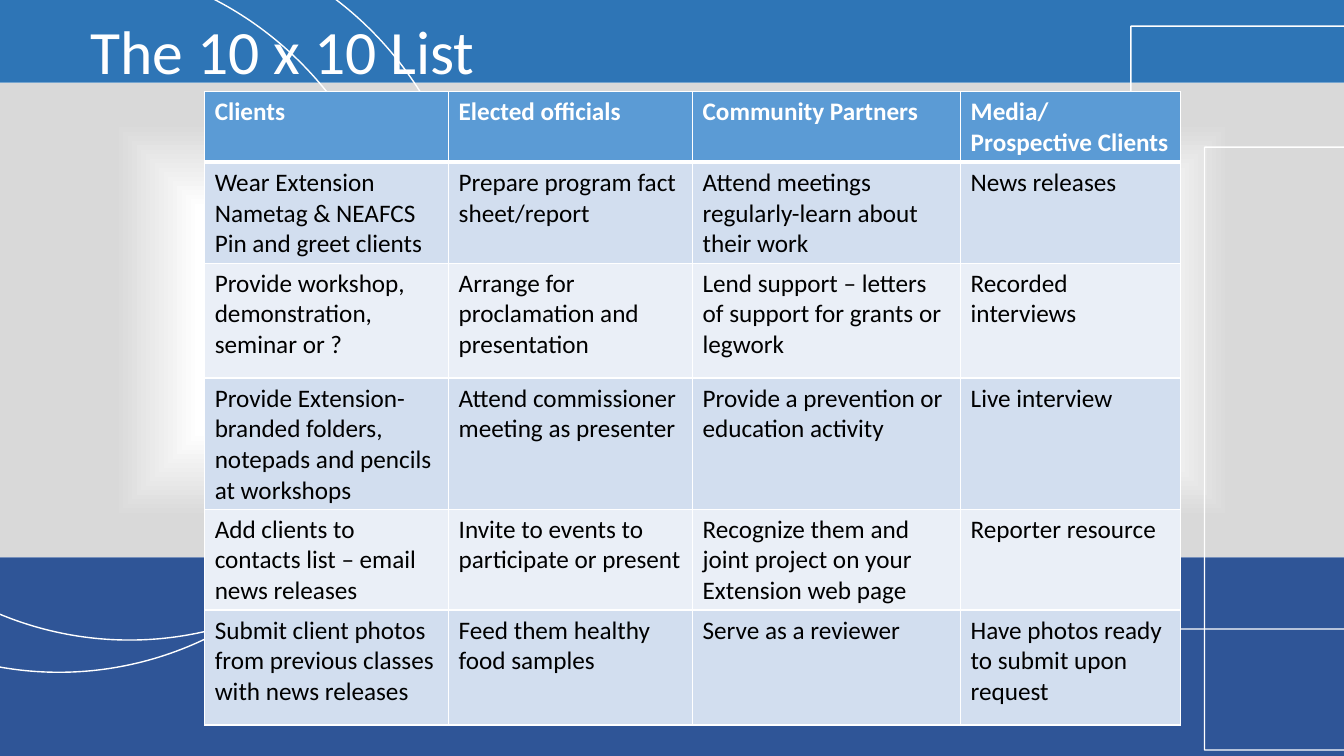
from pptx import Presentation
from pptx.dml.color import RGBColor
from pptx.enum.shapes import MSO_SHAPE as SHAPE
from pptx.enum.text import MSO_ANCHOR as ANCHOR
from pptx.oxml import parse_xml
from pptx.oxml.ns import nsdecls
from pptx.util import Pt

TITLE = "The 10 x 10 List"
ROWS = [
    ["Clients", "Elected officials", "Community Partners",
     "Media/ Prospective Clients"],
    ["Wear Extension Nametag & NEAFCS Pin and greet clients",
     "Prepare program fact sheet/report",
     "Attend meetings regularly-learn about their work",
     "News releases"],
    ["Provide workshop, demonstration, seminar or ?",
     "Arrange for proclamation and presentation",
     "Lend support – letters of support for grants or legwork",
     "Recorded interviews"],
    ["Provide Extension-branded folders, notepads and pencils at workshops",
     "Attend commissioner meeting as presenter",
     "Provide a prevention or education activity",
     "Live interview"],
    ["Add clients to contacts list – email news releases",
     "Invite to events to participate or present",
     "Recognize them and joint project on your Extension web page",
     "Reporter resource"],
    ["Submit client photos from previous classes with news releases",
     "Feed them healthy food samples",
     "Serve as a reviewer",
     "Have photos ready to submit upon request"],
]
COL_WIDTHS = [174.25, 174.25, 191.5, 157]
ROW_HEIGHTS = [50.4, 71.3, 82.1, 92.9, 71.3, 82.1]

WHITE = RGBColor(0xFF, 0xFF, 0xFF)
BLACK = RGBColor(0, 0, 0)
TOP_BLUE = RGBColor(0x2E, 0x75, 0xB6)
BOTTOM_BLUE = RGBColor(0x2F, 0x55, 0x97)
HEADER_BLUE = RGBColor(0x5B, 0x9B, 0xD5)
BANDS = [RGBColor(0xEA, 0xEF, 0xF7), RGBColor(0xD2, 0xDE, 0xEF)]
GREY = RGBColor(0xD9, 0xD9, 0xD9)
GLOW_STOPS = [(0, WHITE), (47, WHITE), (83, GREY), (100, GREY)]

W, H = 960, 540
TOP_END, BOTTOM_START = 59, 398.2
OUTLINES = [  # shape, left, top, width, height
    (SHAPE.OVAL, -154.8, -50.4, 494.6, 507.6),
    (SHAPE.OVAL, -205.2, -27.4, 494.6, 507.6),
    (SHAPE.PENTAGON, 807.8, 18.7, 368.6, 430.6),
    (SHAPE.PENTAGON, 860.4, 105.1, 368.6, 430.6),
]


def add_shape(s, kind, box, fill=None, line=None):
    sp = s.shapes.add_shape(kind, *map(Pt, box))
    sp.shadow.inherit = False
    if fill is None:
        sp.fill.background()
    else:
        sp.fill.solid()
        sp.fill.fore_color.rgb = fill
    if line is None:
        sp.line.fill.background()
    else:
        sp.line.color.rgb = line
        sp.line.width = Pt(1)
    return sp


def add_glow(sp):
    """Replace the fill with a gradient that spreads from the centre."""
    stops = "".join(
        f'<a:gs pos="{pos * 1000}"><a:srgbClr val="{color}"/></a:gs>'
        for pos, color in GLOW_STOPS)
    spPr = sp.element.spPr
    old = spPr.find("{*}noFill")
    spPr.replace(old, parse_xml(
        f'<a:gradFill {nsdecls("a")} rotWithShape="1"><a:gsLst>{stops}</a:gsLst>'
        '<a:path path="shape"><a:fillToRect l="50000" t="50000" r="50000" '
        'b="50000"/></a:path></a:gradFill>'))


def add_run(p, text, size, color, bold=False):
    r = p.add_run()
    r.text = text
    r.font.name = "Calibri"
    r.font.size = Pt(size)
    r.font.bold = bold
    r.font.color.rgb = color


def set_borders(cell, top, bottom):
    """Draw white borders; top and bottom widths are in points."""
    tcPr = cell._tc.get_or_add_tcPr()
    for i, (side, width) in enumerate(
            [("L", 1), ("R", 1), ("T", top), ("B", bottom)]):
        tcPr.insert(i, parse_xml(
            f'<a:ln{side} {nsdecls("a")} w="{Pt(width)}"><a:solidFill>'
            f'<a:srgbClr val="{WHITE}"/></a:solidFill></a:ln{side}>'))


def add_list_table(s):
    table = s.shapes.add_table(
        len(ROWS), len(COL_WIDTHS), Pt(146.2), Pt(65.5),
        Pt(sum(COL_WIDTHS)), Pt(sum(ROW_HEIGHTS))).table
    for col, width in zip(table.columns, COL_WIDTHS):
        col.width = Pt(width)
    for i, (texts, height) in enumerate(zip(ROWS, ROW_HEIGHTS)):
        header = i == 0
        table.rows[i].height = Pt(height)
        for j, text in enumerate(texts):
            cell = table.cell(i, j)
            cell.fill.solid()
            cell.fill.fore_color.rgb = HEADER_BLUE if header else BANDS[i % 2]
            set_borders(cell, 3 if i == 1 else 1, 3 if header else 1)
            add_run(cell.text_frame.paragraphs[0], text, 18,
                    WHITE if header else BLACK, header)


def main():
    prs = Presentation()
    prs.slide_width, prs.slide_height = Pt(W), Pt(H)
    s = prs.slides.add_slide(prs.slide_layouts[6])

    add_glow(add_shape(s, SHAPE.RECTANGLE,
                       (0, TOP_END, W, BOTTOM_START - TOP_END)))
    add_shape(s, SHAPE.RECTANGLE, (0, 0, W, TOP_END), TOP_BLUE)
    add_shape(s, SHAPE.RECTANGLE,
              (0, BOTTOM_START, W, H - BOTTOM_START), BOTTOM_BLUE)
    for kind, *box in OUTLINES:
        add_shape(s, kind, box, line=WHITE)

    tf = s.shapes.add_textbox(Pt(57.6), Pt(0), Pt(828), Pt(77.8)).text_frame
    tf.word_wrap = True
    tf.vertical_anchor = ANCHOR.MIDDLE
    p = tf.paragraphs[0]
    p.line_spacing = 0.9
    add_run(p, TITLE, 44, WHITE)

    add_list_table(s)
    prs.save("out.pptx")


if __name__ == "__main__":
    main()
